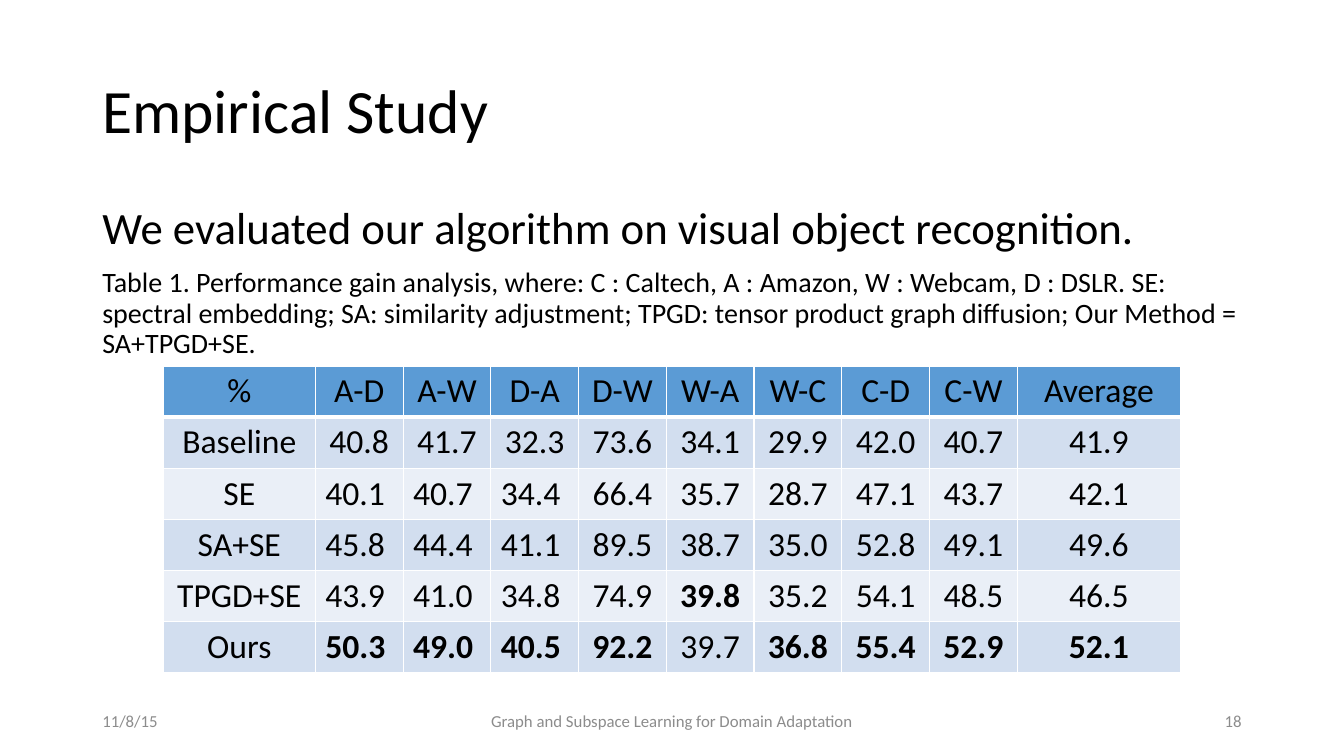
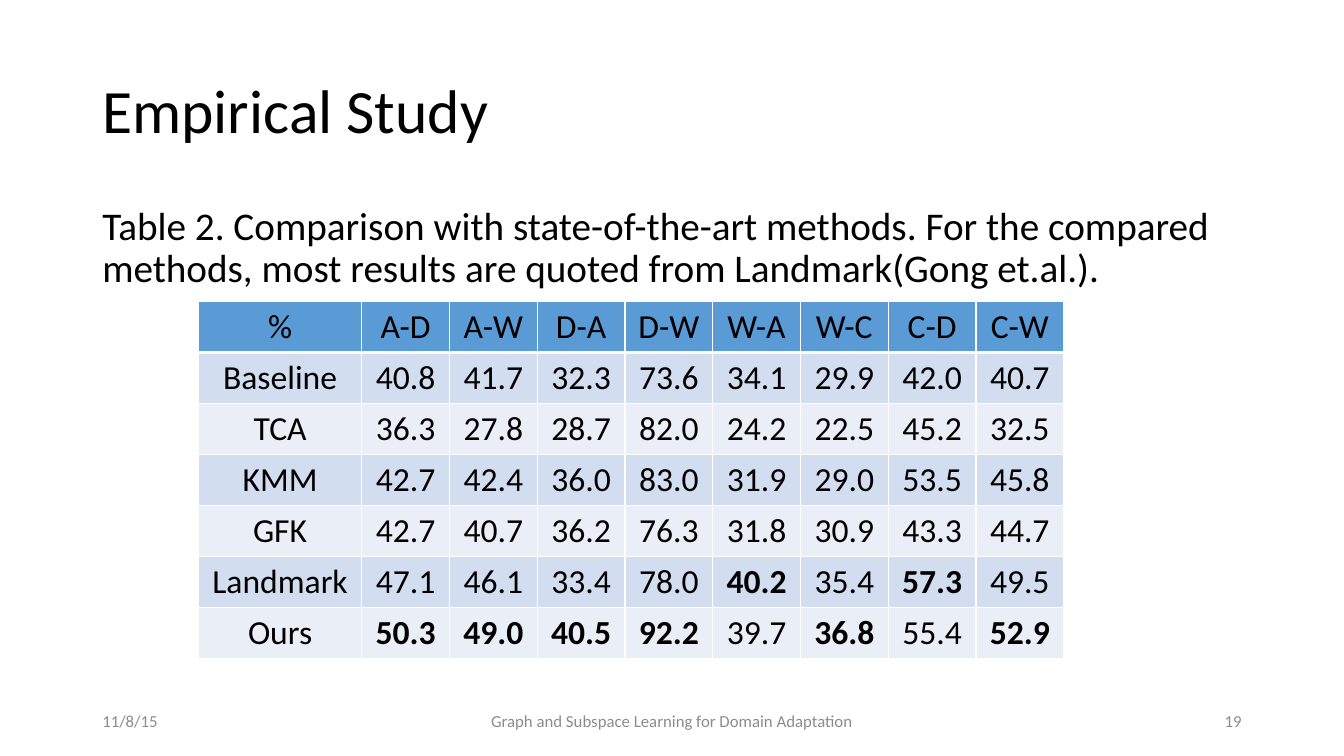
"""Build two slides of result tables on domain adaptation."""
from lxml.etree import SubElement
from pptx import Presentation
from pptx.dml.color import RGBColor
from pptx.enum.text import MSO_ANCHOR, PP_ALIGN
from pptx.oxml.ns import qn
from pptx.util import Pt

COLORS = {"text": "000000", "footer": "8C8C8C", "header": "5B9BD5",
          "odd": "D2DEEF", "even": "EAEFF7", "border": "FFFFFF"}
FONT = "Calibri"
LEFT, WIDTH = 66, 828
ROW_H, VALUE_W = 36.5, 62.7
PAIRS = "% A-D A-W D-A D-W W-A W-C C-D C-W"

SLIDES = [
    {"number": "18",
     "body": [("We evaluated our algorithm on visual object recognition.", 32),
              ("Table 1. Performance gain analysis, where: C : Caltech, A : Amazon, "
               "W : Webcam, D : DSLR. SE: spectral embedding; SA: similarity adjustment; "
               "TPGD: tensor product graph diffusion; Our Method = SA+TPGD+SE.", 20)],
     "at": (116.6, 261.4), "label_w": 108.7, "average_w": 116.6, "left_cols": (1, 2, 3),
     "rows": [PAIRS + " Average",
              "Baseline 40.8 41.7 32.3 73.6 34.1 29.9 42.0 40.7 41.9",
              "SE 40.1 40.7 34.4 66.4 35.7 28.7 47.1 43.7 42.1",
              "SA+SE 45.8 44.4 41.1 89.5 38.7 35.0 52.8 49.1 49.6",
              "TPGD+SE 43.9 41.0 34.8 74.9 39.8* 35.2 54.1 48.5 46.5",
              "Ours 50.3* 49.0* 40.5* 92.2* 39.7 36.8* 55.4* 52.9* 52.1*"]},
    {"number": "19",
     "body": [("Table 2. Comparison with state-of-the-art methods. For the compared "
               "methods, most results are quoted from Landmark(Gong et.al.).", 28)],
     "at": (141.8, 215.3), "label_w": 116.6, "average_w": 0, "left_cols": (),
     "rows": [PAIRS,
              "Baseline 40.8 41.7 32.3 73.6 34.1 29.9 42.0 40.7",
              "TCA 36.3 27.8 28.7 82.0 24.2 22.5 45.2 32.5",
              "KMM 42.7 42.4 36.0 83.0 31.9 29.0 53.5 45.8",
              "GFK 42.7 40.7 36.2 76.3 31.8 30.9 43.3 44.7",
              "Landmark 47.1 46.1 33.4 78.0 40.2* 35.4 57.3* 49.5",
              "Ours 50.3* 49.0* 40.5* 92.2* 39.7 36.8* 55.4 52.9*"]},
]


def style(p, size, color="text", align=PP_ALIGN.LEFT, bold=False):
    p.alignment = align
    for r in p.runs:
        r.font.name = FONT
        r.font.size = Pt(size)
        r.font.bold = bold
        r.font.color.rgb = RGBColor.from_string(COLORS[color])


def add_text(s, box, paras, color="text", align=PP_ALIGN.LEFT,
             anchor=MSO_ANCHOR.MIDDLE, spacing=1.0):
    tf = s.shapes.add_textbox(*(Pt(v) for v in box)).text_frame
    tf.word_wrap = True
    tf.vertical_anchor = anchor
    for i, (text, size) in enumerate(paras):
        p = tf.add_paragraph() if i else tf.paragraphs[0]
        p.text = text
        p.line_spacing = spacing
        p.space_before = Pt(10 if i else 0)
        style(p, size, color, align)


prs = Presentation()
prs.slide_width, prs.slide_height = Pt(960), Pt(540)

for data in SLIDES:
    s = prs.slides.add_slide(prs.slide_layouts[6])
    add_text(s, (LEFT, 28.8, WIDTH, 104.4), [("Empirical Study", 44)], spacing=0.9)
    add_text(s, (LEFT, 143.8, WIDTH, 342.6), data["body"], anchor=MSO_ANCHOR.TOP, spacing=0.9)
    for x, w, text, align in [
            (LEFT, 216, "11/8/15", PP_ALIGN.LEFT),
            (318, 324, "Graph and Subspace Learning for Domain Adaptation", PP_ALIGN.CENTER),
            (678, 216, data["number"], PP_ALIGN.RIGHT)]:
        add_text(s, (x, 500.5, w, 28.8), [(text, 12)], "footer", align)

    rows = [row.split() for row in data["rows"]]
    widths = [data["label_w"]] + [VALUE_W] * 8
    if data["average_w"]:
        widths.append(data["average_w"])
    left, top = data["at"]
    table = s.shapes.add_table(len(rows), len(widths), Pt(left), Pt(top),
                               Pt(sum(widths)), Pt(ROW_H * len(rows))).table
    for col, w in zip(table.columns, widths):
        col.width = Pt(w)
    for i, row in enumerate(rows):
        table.rows[i].height = Pt(ROW_H)
        band = "header" if i == 0 else "odd" if i % 2 else "even"
        for j, value in enumerate(row):
            cell = table.cell(i, j)
            cell.text = value.rstrip("*")
            align = PP_ALIGN.LEFT if i > 1 and j in data["left_cols"] else PP_ALIGN.CENTER
            style(cell.text_frame.paragraphs[0], 24, align=align, bold=value.endswith("*"))
            tcPr = cell._tc.get_or_add_tcPr()
            for side in ("lnL", "lnR", "lnT", "lnB"):
                thick = (i, side) in ((0, "lnB"), (1, "lnT"))
                ln = SubElement(tcPr, qn("a:" + side), w=str(Pt(3 if thick else 1)))
                fill = SubElement(ln, qn("a:solidFill"))
                SubElement(fill, qn("a:srgbClr"), val=COLORS["border"])
            cell.fill.solid()
            cell.fill.fore_color.rgb = RGBColor.from_string(COLORS[band])

prs.save("out.pptx")
